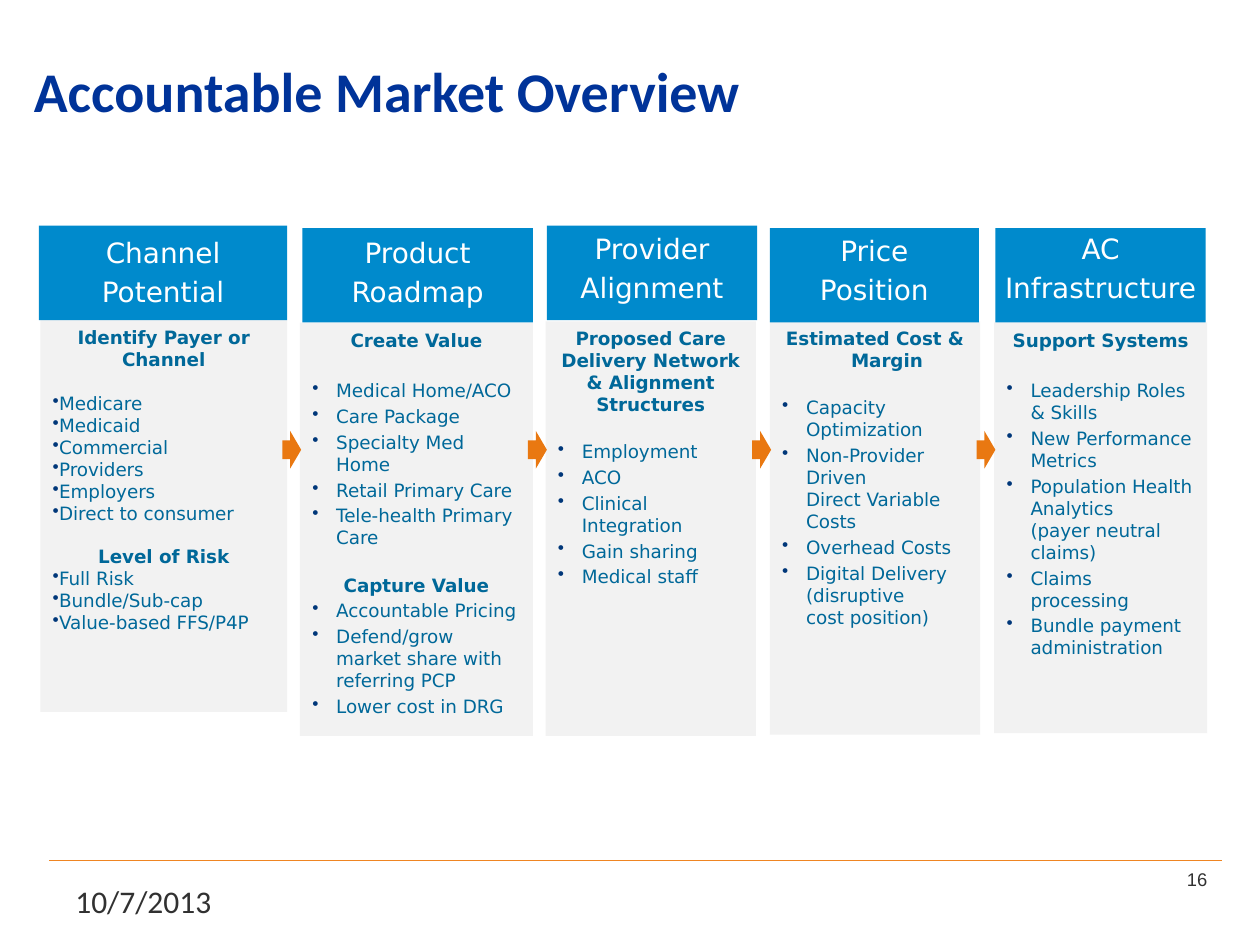
from dataclasses import dataclass
from lxml import etree
from pptx import Presentation
from pptx.dml.color import RGBColor
from pptx.enum.shapes import MSO_CONNECTOR, MSO_SHAPE
from pptx.enum.text import MSO_ANCHOR as Anchor, PP_ALIGN as Align
from pptx.oxml.ns import qn
from pptx.util import Inches, Pt

HEADER_BLUE, BODY_GRAY, ORANGE = "008ACC", "F2F2F2", "E97811"
BODY_TEXT, BULLET, FOOTER_TEXT = "006899", "003779", "313131"
COLUMN_FONT = "DejaVu Sans"
HEADER_HEIGHT = 0.75
HANGING = 0.19
ARROW_LEAD, ARROW_TOP, ARROW_WIDTH, ARROW_HEIGHT = 0.14, 3.42, 0.15, 0.3


@dataclass
class Column:
    title: tuple
    header: tuple       # left, top, width
    title_inset: float  # gap above the title
    body: tuple         # left, top, width, height
    sections: list      # (heading, bullets)
    heading_gap: float = 14.3  # points between the first heading and its bullets
    line_gap: float = 2.1
    indent: float = HANGING
    heading_indent: float = 0


COLUMNS = [
    Column(("Channel", "Potential"), (0.31, 1.79, 1.97), 0.08, (0.32, 2.54, 1.96, 3.11),
           [("Identify Payer or Channel",
             ["Medicare", "Medicaid", "Commercial", "Providers", "Employers",
              "Direct to consumer"]),
            ("Level of Risk", ["Full Risk", "Bundle/Sub-cap", "Value-based FFS/P4P"])],
           heading_gap=12.3, line_gap=0, indent=0),
    Column(("Product", "Roadmap"), (2.4, 1.81, 1.83), 0.06, (2.38, 2.56, 1.85, 3.28),
           [("Create Value",
             ["Medical Home/ACO", "Care Package", "Specialty Med Home",
              "Retail Primary Care", "Tele-health Primary Care"]),
            ("Capture Value",
             ["Accountable Pricing", "Defend/grow market share with referring PCP",
              "Lower cost in DRG"])],
           heading_gap=16.5),
    Column(("Provider", "Alignment"), (4.34, 1.79, 1.67), 0.05, (4.33, 2.55, 1.67, 3.29),
           [("Proposed Care Delivery Network & Alignment Structures",
             ["Employment", "ACO", "Clinical Integration", "Gain sharing",
              "Medical staff"])]),
    Column(("Price", "Position"), (6.11, 1.81, 1.66), 0.04, (6.11, 2.55, 1.67, 3.28),
           [("Estimated Cost & Margin",
             ["Capacity Optimization", "Non-Provider Driven\vDirect Variable Costs",
              "Overhead Costs", "Digital Delivery (disruptive\vcost position)"])],
           heading_indent=HANGING),
    Column(("AC", "Infrastructure"), (7.9, 1.81, 1.67), 0.03, (7.89, 2.56, 1.69, 3.26),
           [("Support Systems",
             ["Leadership Roles & Skills", "New Performance Metrics",
              "Population Health Analytics\v(payer neutral claims)",
              "Claims processing", "Bundle payment\vadministration"])],
           heading_gap=16.5),
]


def rgb(color):
    return RGBColor.from_string(color)


def add_block(slide, preset, box, color):
    block = slide.shapes.add_shape(preset, *map(Inches, box))
    block.shadow.inherit = False
    block.fill.solid()
    block.fill.fore_color.rgb = rgb(color)
    block.line.fill.background()
    return block


def set_indent(paragraph, hanging):
    props = paragraph._p.get_or_add_pPr()
    props.set("marL", str(Inches(hanging)))
    props.set("indent", str(-Inches(hanging)))
    return props


def add_bullet(paragraph, hanging):
    props = set_indent(paragraph, hanging)
    bullet_color = etree.SubElement(props, qn("a:buClr"))
    etree.SubElement(bullet_color, qn("a:srgbClr"), val=BULLET)
    etree.SubElement(props, qn("a:buChar"), char="•")


def style(paragraph, size, color, name=COLUMN_FONT, bold=False, align=Align.LEFT):
    paragraph.alignment = align
    font = paragraph.font
    font.size, font.name, font.bold = Pt(size), name, bold
    font.color.rgb = rgb(color)


def add_paragraph(frame, text):
    """Use the frame's own first paragraph while it is still empty."""
    first = frame.paragraphs[0]
    paragraph = frame.add_paragraph() if first.text else first
    paragraph.text = text
    return paragraph


def add_header(slide, column):
    block = add_block(slide, MSO_SHAPE.RECTANGLE, (*column.header, HEADER_HEIGHT), HEADER_BLUE)
    frame = block.text_frame
    frame.word_wrap = True
    frame.vertical_anchor = Anchor.TOP
    frame.margin_left = frame.margin_right = Inches(0.05)
    frame.margin_top = Inches(column.title_inset)
    for i, word in enumerate(column.title):
        line = add_paragraph(frame, word)
        line.space_before = Pt(3.2 * i)
        style(line, 16, "FFFFFF", align=Align.CENTER)


def add_body(slide, column):
    block = add_block(slide, MSO_SHAPE.RECTANGLE, column.body, BODY_GRAY)
    frame = block.text_frame
    frame.word_wrap = True
    frame.vertical_anchor = Anchor.TOP
    for s, (heading, bullets) in enumerate(column.sections):
        title = add_paragraph(frame, heading)
        set_indent(title, column.heading_indent)
        title.space_before = Pt((12.3 + column.line_gap) * s)
        style(title, 10.5, BODY_TEXT, bold=True, align=Align.CENTER)
        for b, text in enumerate(bullets):
            item = add_paragraph(frame, text)
            add_bullet(item, column.indent)
            opens_column = s == b == 0
            item.space_before = Pt(column.heading_gap if opens_column else column.line_gap)
            style(item, 10.5, BODY_TEXT)


def add_arrow(slide, next_left):
    arrow = add_block(slide, MSO_SHAPE.RIGHT_ARROW,
                      (next_left - ARROW_LEAD, ARROW_TOP, ARROW_WIDTH, ARROW_HEIGHT), ORANGE)
    arrow.adjustments[1] = 0.585


def add_label(slide, box, text, size, color, name, bold=False, align=Align.LEFT,
              anchor=Anchor.TOP):
    frame = slide.shapes.add_textbox(*map(Inches, box)).text_frame
    frame.word_wrap = True
    frame.vertical_anchor = anchor
    style(add_paragraph(frame, text), size, color, name, bold, align)


def add_footer(slide):
    rule = slide.shapes.add_connector(MSO_CONNECTOR.STRAIGHT, *map(Inches, (0.39, 6.83, 9.7, 6.83)))
    rule.line.color.rgb = rgb("EF8522")
    rule.line.width = Pt(1)
    etree.SubElement(rule._element.spPr, qn("a:effectLst"))
    add_label(slide, (7.35, 6.78, 2.33, 0.4), "16", 10.5, FOOTER_TEXT, "Arial",
              align=Align.RIGHT, anchor=Anchor.MIDDLE)
    add_label(slide, (0.5, 6.95, 2.33, 0.4), "10/7/2013", 18, FOOTER_TEXT, "Calibri")


def main():
    deck = Presentation()
    deck.slide_width, deck.slide_height = Inches(10), Inches(7.5)
    slide = deck.slides.add_slide(deck.slide_layouts[6])
    add_label(slide, (0.17, 0.4, 9.51, 0.58), "Accountable Market Overview",
              32, "003399", "Calibri", bold=True)
    for column in COLUMNS:
        add_body(slide, column)
        add_header(slide, column)
    for column in COLUMNS[1:]:
        add_arrow(slide, column.body[0])
    add_footer(slide)
    deck.save("out.pptx")


if __name__ == "__main__":
    main()
